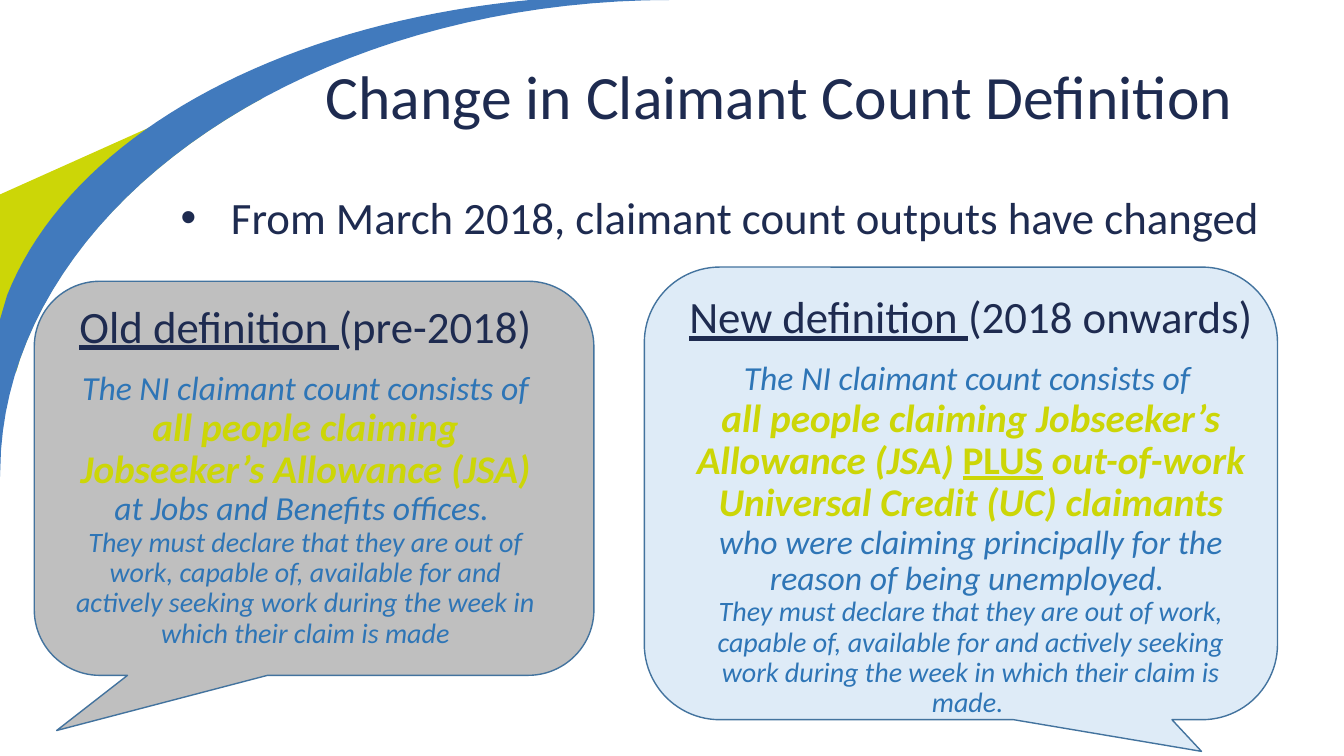
import pptx
import pptx.dml.color
import pptx.enum.shapes
import pptx.enum.text
import pptx.oxml
import pptx.oxml.ns
import pptx.util
from dataclasses import dataclass

COLORS = {
    "navy": "1E2B50",
    "blue": "2E75B6",
    "lime": "CCD607",
    "swoosh": "417ABD",
    "outline": "43739E",
    "grey": "BFBFBF",
    "pale": "DEEBF7",
}
FONT = "Calibri"
SLIDE_WIDTH = pptx.util.Inches(13.33)
SLIDE_HEIGHT = pptx.util.Inches(7.5)
CURVE_STEPS = 40

Point = tuple[float, float]


# Grid: 100 columns by 100 rows over the slide
def cols(count: float) -> int:
    return round(SLIDE_WIDTH * count / 100)


def rows(count: float) -> int:
    return round(SLIDE_HEIGHT * count / 100)


@dataclass
class Area:
    left: float
    top: float
    width: float
    height: float

    def emu(self) -> tuple[int, int, int, int]:
        return cols(self.left), rows(self.top), cols(self.width), rows(self.height)


@dataclass
class Words:
    text: str
    size: float
    color: str = "blue"
    bold: bool = False
    italic: bool = True
    underline: bool = False


@dataclass
class Definition:
    bubble: Area
    text_area: Area
    fill: str
    tail: Point
    paragraphs: list[list[Words]]


def rgb(name: str) -> pptx.dml.color.RGBColor:
    return pptx.dml.color.RGBColor.from_string(COLORS[name])


def add_words(paragraph, words: Words) -> None:
    run = paragraph.add_run()
    run.text = words.text
    run.font.name = FONT
    run.font.size = pptx.util.Pt(words.size)
    run.font.color.rgb = rgb(words.color)
    run.font.bold = words.bold
    run.font.italic = words.italic
    run.font.underline = words.underline


def place(placeholder, area: Area, words: Words):
    placeholder.left, placeholder.top, placeholder.width, placeholder.height = area.emu()
    frame = placeholder.text_frame
    frame.auto_size = pptx.enum.text.MSO_AUTO_SIZE.NONE
    paragraph = frame.paragraphs[0]
    paragraph.alignment = pptx.enum.text.PP_ALIGN.LEFT
    paragraph.line_spacing = 0.9
    paragraph.space_before = pptx.util.Pt(0)
    add_words(paragraph, words)
    return paragraph


def curve(start: Point, pull_out: Point, pull_in: Point, end: Point) -> list[Point]:
    points = []
    for step in range(CURVE_STEPS + 1):
        t = step / CURVE_STEPS
        weights = ((1 - t) ** 3, 3 * t * (1 - t) ** 2, 3 * t**2 * (1 - t), t**3)
        controls = (start, pull_out, pull_in, end)
        points.append((sum(w * p[0] for w, p in zip(weights, controls)),
                       sum(w * p[1] for w, p in zip(weights, controls))))
    return points


def add_swoosh(slide, outline: list[Point], fill: str) -> None:
    corners = [(cols(x), rows(y)) for x, y in outline]
    builder = slide.shapes.build_freeform(*corners[0])
    builder.add_line_segments(corners[1:], close=True)
    swoosh = builder.convert_to_shape()
    swoosh.shadow.inherit = False
    swoosh.fill.solid()
    swoosh.fill.fore_color.rgb = rgb(fill)
    swoosh.line.fill.background()


def add_definition(slide, definition: Definition) -> None:
    bubble = slide.shapes.add_shape(
        pptx.enum.shapes.MSO_SHAPE.ROUNDED_RECTANGULAR_CALLOUT, *definition.bubble.emu())
    bubble.adjustments[0], bubble.adjustments[1] = definition.tail
    bubble.shadow.inherit = False
    bubble.fill.solid()
    bubble.fill.fore_color.rgb = rgb(definition.fill)
    bubble.line.color.rgb = rgb("outline")
    bubble.line.width = pptx.util.Pt(1)

    frame = slide.shapes.add_textbox(*definition.text_area.emu()).text_frame
    frame.word_wrap = True
    for index, content in enumerate(definition.paragraphs):
        paragraph = frame.add_paragraph() if index else frame.paragraphs[0]
        paragraph.alignment = pptx.enum.text.PP_ALIGN.CENTER
        paragraph.line_spacing = 0.9
        # A gap parts the heading from the explanation
        paragraph.space_before = pptx.util.Pt(13 if index == 1 else 0)
        for words in content:
            add_words(paragraph, words)


def heading(term: str, period: str) -> list[Words]:
    return [Words(term, 32, "navy", italic=False, underline=True),
            Words(period, 32, "navy", italic=False)]


def key(text: str) -> Words:
    return Words(text, 28, "lime", bold=True)


# Content
INTRO = Words("The NI claimant count consists of ", 24)
DUTY = ("They must declare that they are out of work, capable of, available for and "
        "actively seeking work during the week in which their claim is made")

DEFINITIONS = [
    Definition(
        Area(2.55, 37.2, 41.64, 52.13), Area(4.2, 39.6, 37.06, 55.47),
        "grey", (-0.46, 0.64),
        [heading("Old definition ", "(pre-2018)"),
         [INTRO, key("all people claiming Jobseeker’s Allowance (JSA) "),
          Words("at Jobs and Benefits offices. ", 24)],
         [Words(DUTY, 20)]]),
    Definition(
        Area(47.94, 35.33, 47.11, 59.87), Area(50.41, 38.4, 43.66, 57.87),
        "pale", (0.38, 0.57),
        [heading("New definition ", "(2018 onwards)"),
         [INTRO],
         [key("all people claiming Jobseeker’s Allowance (JSA) "),
          Words("PLUS", 28, "lime", bold=True, italic=False, underline=True),
          key(" out-of-work Universal Credit (UC) claimants "),
          Words("who were claiming principally for the reason of being unemployed. ", 24)],
         [Words(DUTY + ". ", 20)]]),
]

GREEN_WEDGE = [(18.9, 10.67), (19.5, 13.07),
               *curve((19.05, 13.47), (10.5, 22), (4.2, 33.73), (1.5, 47.47)),
               (1.2, 49.2), (0, 44.27), (0, 25.73)]
BLUE_ARC = [(53.7, 0),
            *curve((50, 0), (23.25, 0), (1.43, 26.4), (0.08, 59.47)),
            (0, 63.2), (0, 42.27),
            *curve((0.53, 39.07), (5.18, 18.27), (20.4, 3.2), (39.45, 0))]


def main() -> None:
    deck = pptx.Presentation()
    deck.slide_width, deck.slide_height = SLIDE_WIDTH, SLIDE_HEIGHT
    slide = deck.slides.add_slide(deck.slide_layouts[1])

    # Corner decoration
    add_swoosh(slide, GREEN_WEDGE, "lime")
    add_swoosh(slide, BLUE_ARC, "swoosh")

    # Title and announcement
    place(slide.shapes.title, Area(23.48, 4.4, 69.62, 17.47),
          Words("Change in Claimant Count Definition", 44, "navy", italic=False))
    announcement = place(
        slide.placeholders[1], Area(5.18, 25.2, 93.7, 11.2),
        Words("From March 2018, claimant count outputs have changed", 32, "navy", italic=False))
    properties = announcement._p.get_or_add_pPr()
    properties.set("marL", str(pptx.util.Inches(1.5)))
    properties.set("indent", str(pptx.util.Inches(-0.5)))
    bullet = pptx.oxml.parse_xml(f'<a:buChar {pptx.oxml.ns.nsdecls("a")} char="•"/>')
    properties.append(bullet)

    # Old and new definitions
    for definition in DEFINITIONS:
        add_definition(slide, definition)

    deck.save("out.pptx")


if __name__ == "__main__":
    main()
